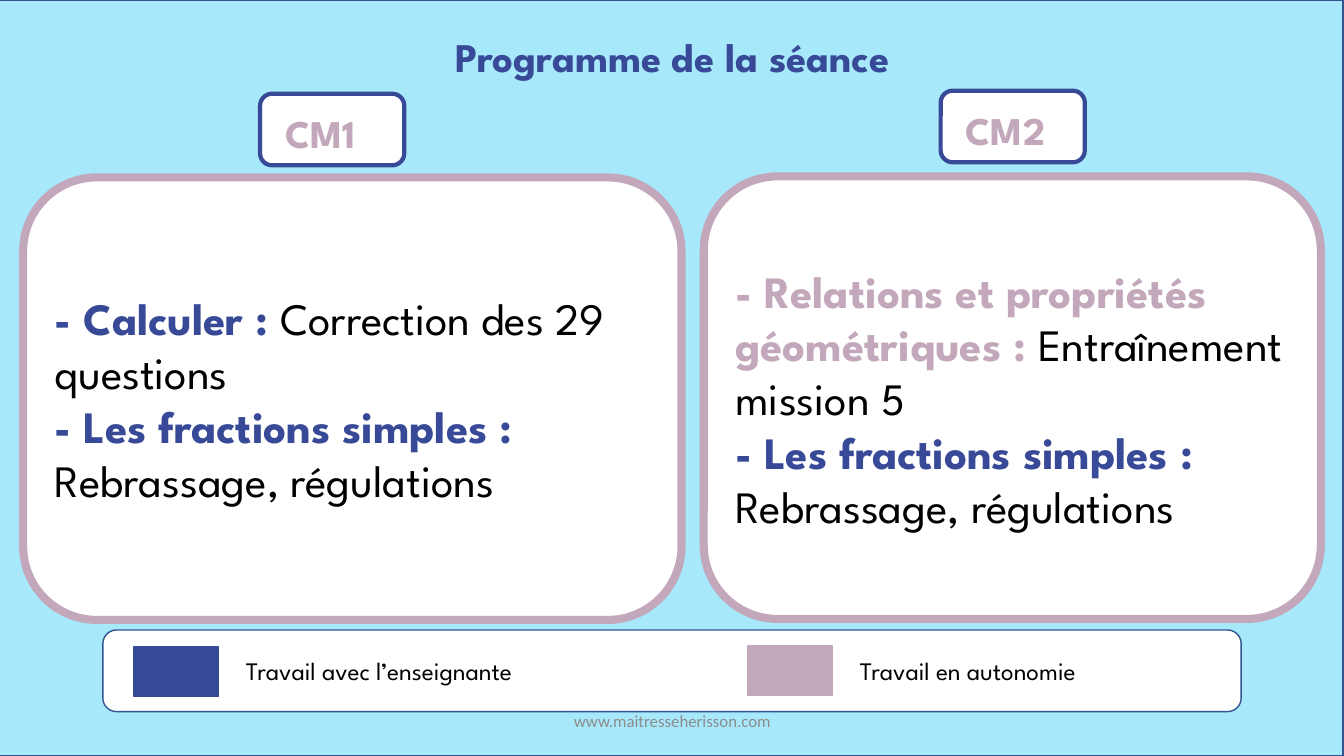
from pptx import Presentation
from pptx.dml.color import RGBColor
from pptx.enum.shapes import MSO_SHAPE
from pptx.enum.text import MSO_ANCHOR, PP_ALIGN
from pptx.util import Inches, Pt

RECT, ROUNDED = MSO_SHAPE.RECTANGLE, MSO_SHAPE.ROUNDED_RECTANGLE
LEFT, CENTER = PP_ALIGN.LEFT, PP_ALIGN.CENTER
TOP, MIDDLE = MSO_ANCHOR.TOP, MSO_ANCHOR.MIDDLE

COLORS = {
    "sky": "A7E8FB", "white": "FFFFFF", "black": "000000", "grey": "8C8C8C",
    "edge": "325491", "teacher": "374997", "alone": "C3A7BA",
}
FONT = "League Spartan"
WIDTH, HEIGHT = 13.33, 7.5

TITLE = "Programme de la séance"
WEBSITE = "www.maitresseherisson.com"

# Each run: text, colour, bold
FRACTIONS = [
    [("- Les fractions simples :", "teacher", True)],
    [("Rebrassage, régulations", "black", False)],
]
CLASSES = [
    {"level": "CM1", "badge": (2.58, 0.93), "panel": (0.23, 1.76, 6.53, 4.39),
     "tasks": [[("- Calculer : ", "teacher", True),
                ("Correction des 29 questions", "black", False)]] + FRACTIONS},
    {"level": "CM2", "badge": (9.33, 0.9), "panel": (6.98, 1.75, 6.12, 4.39),
     "tasks": [[("- Relations et propriétés géométriques : ", "alone", True),
                ("Entraînement mission 5", "black", False)]] + FRACTIONS},
]
# Each entry: label, colour, swatch left, swatch top
LEGEND = [
    ("Travail avec l’enseignante", "teacher", 1.33, 6.42),
    ("Travail en autonomie", "alone", 7.42, 6.41),
]

prs = Presentation()
prs.slide_width, prs.slide_height = Inches(WIDTH), Inches(HEIGHT)
slide = prs.slides.add_slide(prs.slide_layouts[6])


def rgb(name):
    return RGBColor.from_string(COLORS[name])


def add_block(kind, box, fill, line, line_width=1):
    block = slide.shapes.add_shape(kind, *map(Inches, box))
    block.shadow.inherit = False
    block.fill.solid()
    block.fill.fore_color.rgb = rgb(fill)
    block.line.color.rgb = rgb(line)
    block.line.width = Pt(line_width)
    return block


def add_label(text, box, size, color, bold=False, align=LEFT, anchor=TOP, font=FONT):
    frame = slide.shapes.add_textbox(*map(Inches, box)).text_frame
    frame.word_wrap = True
    frame.vertical_anchor = anchor
    paragraph = frame.paragraphs[0]
    paragraph.text = text
    paragraph.alignment = align
    paragraph.font.name = font
    paragraph.font.size = Pt(size)
    paragraph.font.bold = bold
    paragraph.font.color.rgb = rgb(color)


def add_tasks(panel, tasks):
    frame = panel.text_frame
    frame.word_wrap = True
    frame.vertical_anchor = MIDDLE
    for i, task in enumerate(tasks):
        paragraph = frame.paragraphs[0] if i == 0 else frame.add_paragraph()
        paragraph.alignment = LEFT
        paragraph.font.name = FONT
        paragraph.font.size = Pt(32)
        for text, color, bold in task:
            run = paragraph.add_run()
            run.text = text
            run.font.bold = bold
            run.font.color.rgb = rgb(color)


add_block(RECT, (-0.01, 0, WIDTH, HEIGHT), "sky", "edge")
add_label(TITLE, (0.01, 0.27, WIDTH, 0.59), 29, "teacher", True, CENTER)

for group in CLASSES:
    left, top = group["badge"]
    add_block(ROUNDED, (left, top, 1.43, 0.71), "white", "teacher", 3)
    add_label(group["level"], (left + 0.15, top + 0.11, 1.1, 0.57), 28, "alone", True)
    panel = add_block(ROUNDED, group["panel"], "white", "alone", 5.75)
    add_tasks(panel, group["tasks"])

add_block(ROUNDED, (1.02, 6.25, 11.29, 0.81), "white", "edge")
for label, color, left, top in LEGEND:
    add_block(RECT, (left, top, 0.84, 0.49), color, color)
    add_label(label, (left + 1.01, 6.45, 3.42, 0.4), 18, "black")

add_label(WEBSITE, (4.42, 6.95, 4.5, 0.4), 12, "grey",
          align=CENTER, anchor=MIDDLE, font="Calibri")

prs.save("out.pptx")
